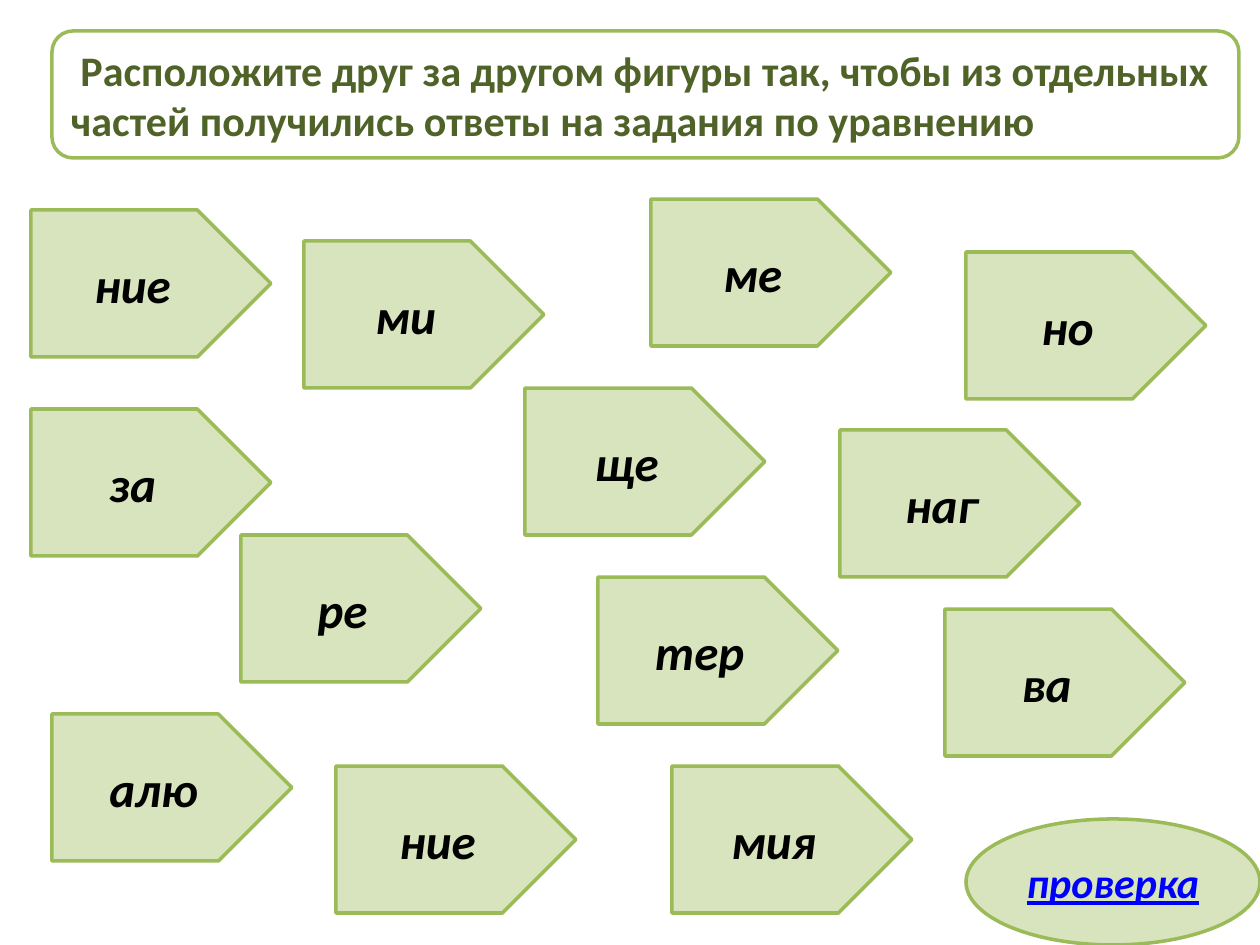
from dataclasses import dataclass

import pptx
import pptx.dml.color
import pptx.enum.shapes
import pptx.enum.text
import pptx.util

PX = pptx.util.Inches(1) / 126
SHAPES = pptx.enum.shapes.MSO_SHAPE
ALIGN = pptx.enum.text.PP_ALIGN
FONT = "Calibri"
WHITE, PALE, GREEN = "FFFFFF", "D7E4BD", "9BBB59"
DARK_GREEN, BLACK, BLUE = "4F6228", "000000", "0000FF"
ARROW_WIDTH, ARROW_HEIGHT = 240, 147
TASK = (" Расположите друг за другом фигуры так, чтобы из отдельных "
        "частей получились ответы на задания по уравнению")


@dataclass(frozen=True)
class Box:
    left: int
    top: int
    width: int
    height: int

    def emu(self) -> tuple[int, ...]:
        return tuple(round(value * PX) for value in
                     (self.left, self.top, self.width, self.height))


@dataclass(frozen=True)
class Syllable:
    text: str
    left: int
    top: int


TASK_BOX = Box(52, 31, 1187, 127)
CHECK_BOX = Box(966, 819, 294, 126)
SYLLABLES = (
    Syllable("алю", 52, 714),
    Syllable("ми", 304, 241),
    Syllable("но", 966, 252),
    Syllable("тер", 598, 577),
    Syllable("мия", 672, 766),
    Syllable("за", 31, 409),
    Syllable("ме", 651, 199),
    Syllable("ще", 525, 388),
    Syllable("ние", 336, 766),
    Syllable("наг", 840, 430),
    Syllable("ре", 241, 535),
    Syllable("ва", 945, 609),
    Syllable("ние", 31, 210),
)


def color(value: str) -> pptx.dml.color.RGBColor:
    return pptx.dml.color.RGBColor.from_string(value)


def add_figure(page, kind, box: Box, fill: str):
    figure = page.shapes.add_shape(kind, *box.emu())
    figure.shadow.inherit = False
    figure.fill.solid()
    figure.fill.fore_color.rgb = color(fill)
    figure.line.color.rgb = color(GREEN)
    figure.line.width = pptx.util.Pt(2)
    return figure


def write(shape, text: str, size: int, ink: str, align=ALIGN.CENTER,
          italic: bool = True, underline: bool = False) -> None:
    frame = shape.text_frame
    frame.text = text
    frame.word_wrap = True
    frame.auto_size = pptx.enum.text.MSO_AUTO_SIZE.NONE
    frame.vertical_anchor = pptx.enum.text.MSO_ANCHOR.MIDDLE
    para = frame.paragraphs[0]
    para.alignment = align
    font = para.font
    font.name = FONT
    font.size = pptx.util.Pt(size)
    font.bold = True
    font.italic = italic
    font.underline = underline
    font.color.rgb = color(ink)


def add_task(page) -> None:
    border = add_figure(page, SHAPES.ROUNDED_RECTANGLE, TASK_BOX, WHITE)
    title = page.shapes.title
    title.element.addprevious(border.element)
    title.left, title.top, title.width, title.height = TASK_BOX.emu()
    write(title, TASK, 24, DARK_GREEN, ALIGN.LEFT, italic=False)
    inset = round(19 * PX)
    title.text_frame.margin_left = title.text_frame.margin_right = inset


def add_syllable(page, syllable: Syllable) -> None:
    box = Box(syllable.left, syllable.top, ARROW_WIDTH, ARROW_HEIGHT)
    arrow = add_figure(page, SHAPES.PENTAGON, box, PALE)
    write(arrow, syllable.text, 28, BLACK)


def main() -> None:
    deck = pptx.Presentation()
    deck.slide_width = pptx.util.Inches(10)
    deck.slide_height = pptx.util.Inches(7.5)
    page = deck.slides.add_slide(deck.slide_layouts.get_by_name("Title Only"))
    add_task(page)
    for syllable in SYLLABLES:
        add_syllable(page, syllable)
    check = add_figure(page, SHAPES.OVAL, CHECK_BOX, PALE)
    write(check, "проверка", 24, BLUE, underline=True)
    deck.save("out.pptx")


if __name__ == "__main__":
    main()
